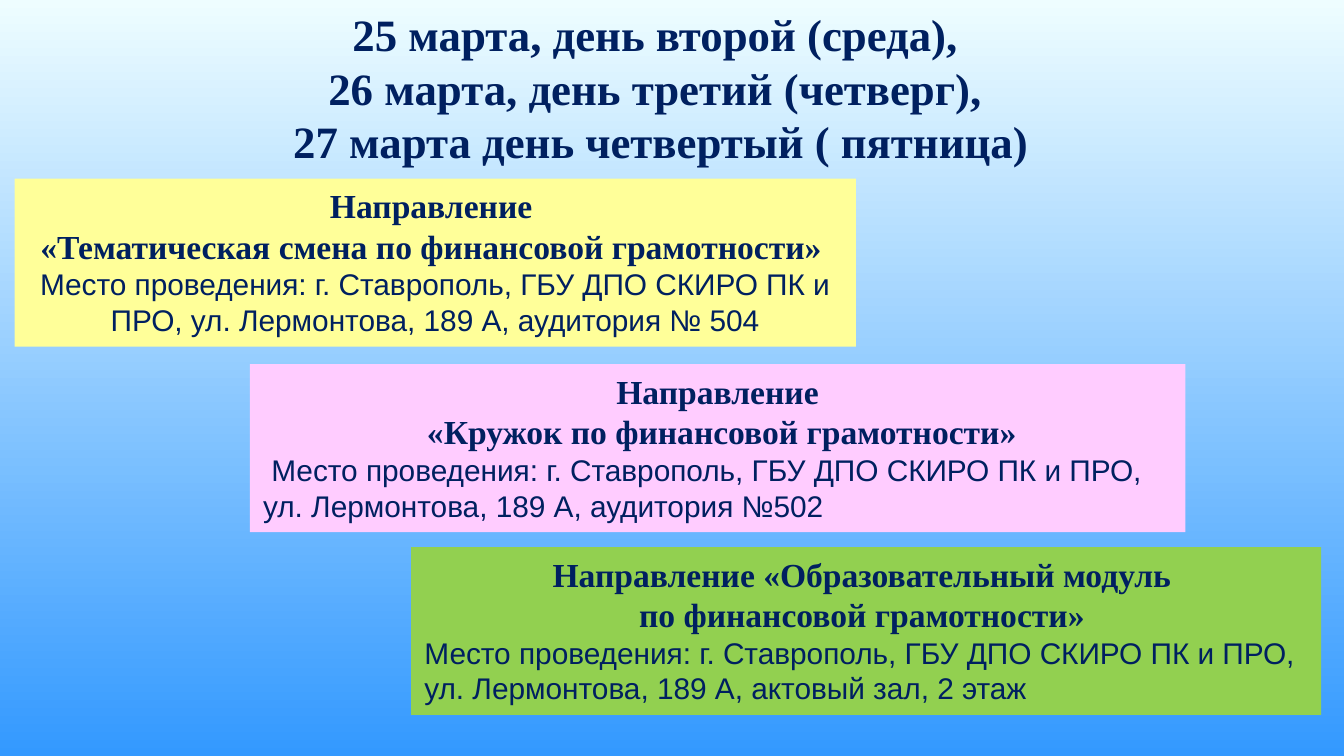
from dataclasses import dataclass

from pptx import Presentation
from pptx.dml.color import RGBColor
from pptx.enum import shapes, text
from pptx.util import Inches, Pt

NAVY = RGBColor(0x00, 0x20, 0x60)
YELLOW = RGBColor(0xFF, 0xFF, 0x99)
PINK = RGBColor(0xFF, 0xCC, 0xFF)
GREEN = RGBColor(0x92, 0xD0, 0x50)
SKY_TOP = RGBColor(0xEE, 0xFD, 0xFF)
SKY_BOTTOM = RGBColor(0x33, 0x99, 0xFF)

SERIF, SANS = "Times New Roman", "Arial"
CENTER = text.PP_ALIGN.CENTER
LEFT = text.PP_ALIGN.LEFT
JUSTIFY = text.PP_ALIGN.JUSTIFY

CARD_HEIGHT = 1.25


@dataclass
class Direction:
    left: float
    top: float
    width: float
    color: RGBColor
    heading: list[str]
    venue: list[str]
    venue_align: text.PP_ALIGN
    wrap: bool = True


DATES = [
    "25 марта, день второй (среда), ",
    "26 марта, день третий (четверг), ",
    "27 марта день четвертый ( пятница)",
]

DIRECTIONS = [
    Direction(
        0.11, 1.33, 6.26, YELLOW,
        ["Направление ", "«Тематическая смена по финансовой грамотности» "],
        ["Место проведения: г. Ставрополь, ГБУ ДПО СКИРО ПК и ПРО, "
         "ул. Лермонтова, 189 А, аудитория № 504"],
        CENTER,
    ),
    Direction(
        1.86, 2.71, 6.96, PINK,
        ["Направление", " «Кружок по финансовой грамотности»"],
        [" Место проведения: г. Ставрополь, ГБУ ДПО СКИРО ПК и ПРО, ",
         "ул. Лермонтова, 189 А, аудитория №502 "],
        JUSTIFY, wrap=False,
    ),
    Direction(
        3.06, 4.07, 6.77, GREEN,
        ["Направление «Образовательный модуль ", "по финансовой грамотности» "],
        ["Место проведения: г. Ставрополь, ГБУ ДПО СКИРО ПК и ПРО, "
         "ул. Лермонтова, 189 А, актовый зал, 2 этаж"],
        LEFT,
    ),
]


def write_lines(frame, lines: list[str], *, size: float, font: str = SERIF,
                bold: bool = True, align: text.PP_ALIGN = CENTER) -> None:
    """Add paragraphs to the frame, starting with its first empty one."""
    for line in lines:
        first = frame.paragraphs[0]
        paragraph = frame.add_paragraph() if first.runs else first
        paragraph.alignment = align
        run = paragraph.add_run()
        run.text = line
        run.font.size = Pt(size)
        run.font.name = font
        run.font.bold = bold
        run.font.color.rgb = NAVY


def fit_frame(frame, wrap: bool = True) -> None:
    frame.word_wrap = wrap
    frame.auto_size = text.MSO_AUTO_SIZE.SHAPE_TO_FIT_TEXT
    frame.vertical_anchor = text.MSO_ANCHOR.TOP


def draw_direction(slide, direction: Direction) -> None:
    card = slide.shapes.add_shape(
        shapes.MSO_SHAPE.RECTANGLE, Inches(direction.left), Inches(direction.top),
        Inches(direction.width), Inches(CARD_HEIGHT))
    card.shadow.inherit = False
    card.fill.solid()
    card.fill.fore_color.rgb = direction.color
    card.line.fill.background()
    fit_frame(card.text_frame, direction.wrap)
    write_lines(card.text_frame, direction.heading, size=18)
    write_lines(card.text_frame, direction.venue, size=16, font=SANS,
                bold=False, align=direction.venue_align)


def main() -> None:
    # Widescreen 16:9 page
    prs = Presentation()
    prs.slide_width = Inches(10)
    prs.slide_height = Inches(10 * 9 / 16)
    slide = prs.slides.add_slide(prs.slide_layouts[6])

    # Background gradient, top to bottom
    sky = slide.background.fill
    sky.gradient()
    sky.gradient_angle = 270
    for stop, color in zip(sky.gradient_stops, (SKY_TOP, SKY_BOTTOM)):
        stop.color.rgb = color

    # Dates
    dates = slide.shapes.add_textbox(0, 0, Inches(9.83), Inches(1.31))
    fit_frame(dates.text_frame)
    write_lines(dates.text_frame, DATES, size=24)

    # Directions with their venues
    for direction in DIRECTIONS:
        draw_direction(slide, direction)

    prs.save("out.pptx")


if __name__ == "__main__":
    main()
